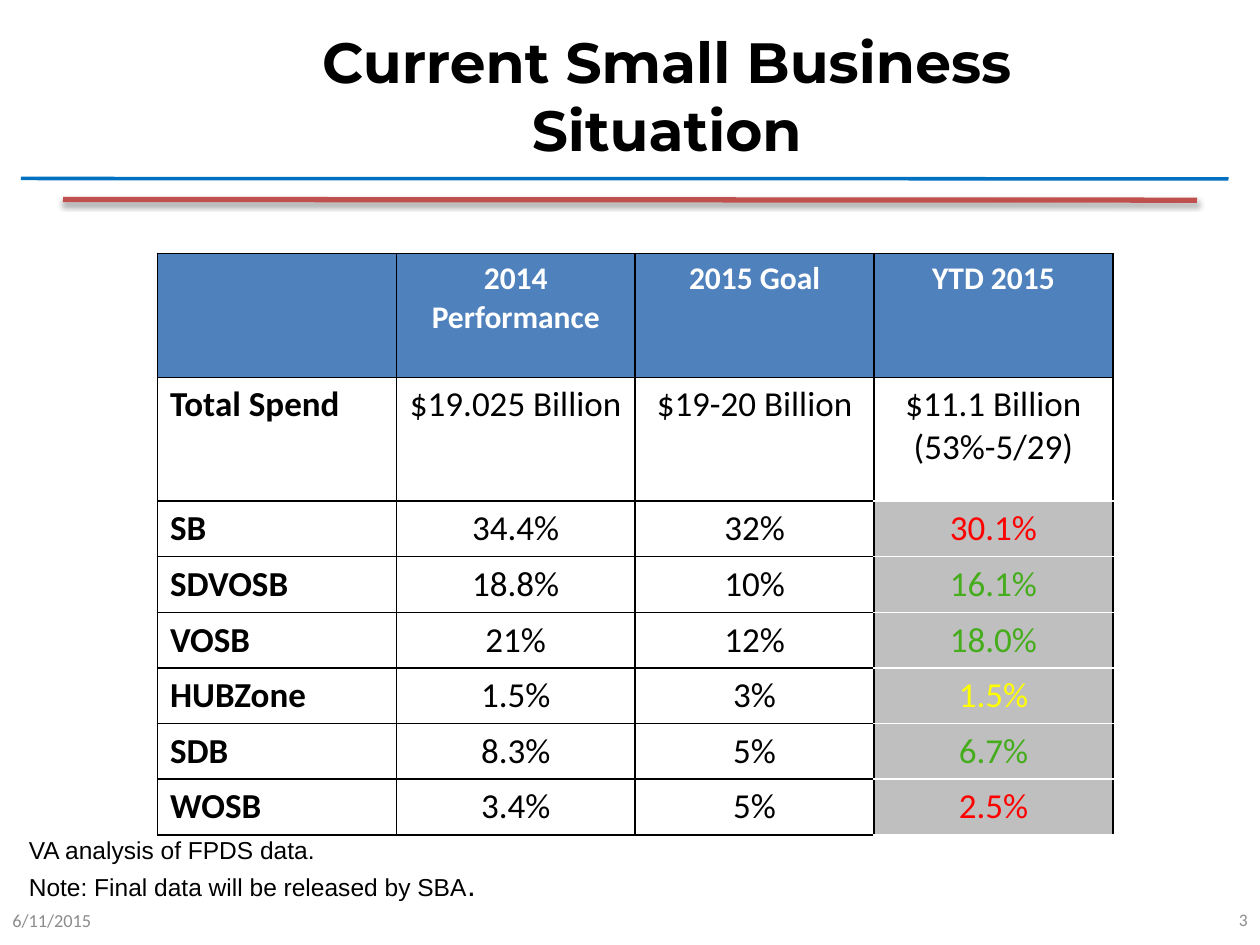
from dataclasses import dataclass
from typing import Optional

from lxml import etree
from pptx import Presentation
from pptx.dml.color import RGBColor
from pptx.enum.shapes import MSO_CONNECTOR
from pptx.enum.text import MSO_ANCHOR, PP_ALIGN
from pptx.oxml.ns import qn
from pptx.slide import Slide
from pptx.table import _Cell
from pptx.util import Pt

LEFT, CENTER, RIGHT = PP_ALIGN.LEFT, PP_ALIGN.CENTER, PP_ALIGN.RIGHT
TOP, MIDDLE = MSO_ANCHOR.TOP, MSO_ANCHOR.MIDDLE
STRAIGHT = MSO_CONNECTOR.STRAIGHT

BLACK, WHITE, GRAY, MUTED = "000000", "FFFFFF", "BFBFBF", "8C8C8C"
HEADER_BLUE, RULE_BLUE, RULE_RED = "4F81BD", "0070C0", "C0504D"
MISSED, MET, CLOSE = "FF0000", "45AC1C", "FFFF00"

COLUMN_WIDTH = 136.5
TALL_ROW, SHORT_ROW = 70.8, 31.8


@dataclass
class TextStyle:
    size: float
    font: str = "Calibri"
    color: str = BLACK
    bold: bool = False
    align: PP_ALIGN = LEFT


@dataclass
class Label:
    text: str
    left: float
    top: float
    width: float
    height: float
    style: TextStyle
    anchor: MSO_ANCHOR = MIDDLE


@dataclass
class Rule:
    left: float
    right: float
    start_y: float
    end_y: float
    color: str
    width: float
    shadow: bool = False


@dataclass
class GoalRow:
    name: str
    performance: str
    goal: str
    year_to_date: str
    status: Optional[str] = None


LABELS = [
    Label("6/11/2015", 0, 511.2, 168, 28.8, TextStyle(10.5, color=MUTED)),
    Label("3", 552, 511.2, 168, 28.8, TextStyle(10, color=MUTED, align=RIGHT)),
    Label("Current Small Business\vSituation", 96, 12, 570, 84,
          TextStyle(32.4, "Montserrat", bold=True, align=CENTER)),
]
NOTES = Label("VA analysis of FPDS data.\nNote: Final data will be released by SBA",
              9.4, 473.8, 504, 46, TextStyle(14, "Arial"), TOP)
RULES = [
    Rule(12, 702, 102, 102.2, RULE_BLUE, 2),
    Rule(36, 684, 114, 114.4, RULE_RED, 3, shadow=True),
]
HEADINGS = ["", "2014\nPerformance", "2015 Goal", "YTD 2015"]
GOAL_ROWS = [
    GoalRow("Total Spend", "$19.025 Billion", "$19-20 Billion", "$11.1 Billion\n(53%-5/29)"),
    GoalRow("SB", "34.4%", "32%", "30.1%", MISSED),
    GoalRow("SDVOSB", "18.8%", "10%", "16.1%", MET),
    GoalRow("VOSB", "21%", "12%", "18.0%", MET),
    GoalRow("HUBZone", "1.5%", "3%", "1.5%", CLOSE),
    GoalRow("SDB", "8.3%", "5%", "6.7%", MET),
    GoalRow("WOSB", "3.4%", "5%", "2.5%", MISSED),
]


def rgb(color: str) -> RGBColor:
    return RGBColor.from_string(color)


def style_text(text_frame, style: TextStyle) -> None:
    for paragraph in text_frame.paragraphs:
        paragraph.alignment = style.align
        for run in paragraph.runs:
            run.font.name = style.font
            run.font.size = Pt(style.size)
            run.font.bold = style.bold
            run.font.color.rgb = rgb(style.color)


def add_label(slide: Slide, label: Label):
    shape = slide.shapes.add_textbox(
        Pt(label.left), Pt(label.top), Pt(label.width), Pt(label.height))
    text_frame = shape.text_frame
    text_frame.word_wrap = True
    text_frame.vertical_anchor = label.anchor
    text_frame.text = label.text
    style_text(text_frame, label.style)
    return text_frame


def add_color(parent, color: str):
    return etree.SubElement(parent, qn("a:srgbClr"), val=color)


def add_rule(slide: Slide, rule: Rule) -> None:
    connector = slide.shapes.add_connector(
        STRAIGHT, Pt(rule.left), Pt(rule.start_y), Pt(rule.right), Pt(rule.end_y))
    connector.line.color.rgb = rgb(rule.color)
    connector.line.width = Pt(rule.width)
    effects = etree.SubElement(connector._element.spPr, qn("a:effectLst"))
    if rule.shadow:
        shadow = etree.SubElement(
            effects, qn("a:outerShdw"), blurRad=str(Pt(3.1)), dist=str(Pt(1.8)),
            dir="5400000", rotWithShape="0")
        etree.SubElement(add_color(shadow, BLACK), qn("a:alpha"), val="35000")


def fill_cell(cell: _Cell, text: str, style: TextStyle, fill: str,
              top: str = BLACK, bottom: str = BLACK) -> None:
    cell.text_frame.text = text
    style_text(cell.text_frame, style)
    properties = cell._tc.get_or_add_tcPr()
    for side, color in (("L", BLACK), ("R", BLACK), ("T", top), ("B", bottom)):
        border = etree.SubElement(properties, qn(f"a:ln{side}"), w=str(Pt(1)))
        add_color(etree.SubElement(border, qn("a:solidFill")), color)
    cell.fill.solid()
    cell.fill.fore_color.rgb = rgb(fill)


def add_goal_table(slide: Slide) -> None:
    heights = [TALL_ROW if row.status is None else SHORT_ROW for row in GOAL_ROWS]
    heights.insert(0, TALL_ROW)
    table = slide.shapes.add_table(
        len(heights), len(HEADINGS), Pt(90), Pt(144.8),
        Pt(COLUMN_WIDTH * len(HEADINGS)), Pt(sum(heights))).table
    table.first_row = table.horz_banding = False
    for column in table.columns:
        column.width = Pt(COLUMN_WIDTH)
    for table_row, height in zip(table.rows, heights):
        table_row.height = Pt(height)

    heading_style = TextStyle(18, color=WHITE, bold=True, align=CENTER)
    for index, heading in enumerate(HEADINGS):
        fill_cell(table.cell(0, index), heading, heading_style, HEADER_BLUE)

    name_style = TextStyle(20, bold=True)
    value_style = TextStyle(20, align=CENTER)
    for index, row in enumerate(GOAL_ROWS, start=1):
        fill_cell(table.cell(index, 0), row.name, name_style, WHITE)
        fill_cell(table.cell(index, 1), row.performance, value_style, WHITE)
        fill_cell(table.cell(index, 2), row.goal, value_style, WHITE)
        fill_cell(table.cell(index, 3), row.year_to_date,
                  TextStyle(20, color=row.status or BLACK, align=CENTER),
                  GRAY if row.status else WHITE,
                  top=WHITE if row.status else BLACK, bottom=WHITE)


def add_notes(slide: Slide) -> None:
    text_frame = add_label(slide, NOTES)
    period = text_frame.paragraphs[-1].add_run()
    period.text = "."
    period.font.name = NOTES.style.font
    period.font.size = Pt(18)
    period.font.color.rgb = rgb(BLACK)


def main() -> None:
    presentation = Presentation()
    presentation.slide_width, presentation.slide_height = Pt(720), Pt(540)
    slide = presentation.slides.add_slide(presentation.slide_layouts[6])
    for label in LABELS:
        add_label(slide, label)
    for rule in RULES:
        add_rule(slide, rule)
    add_goal_table(slide)
    add_notes(slide)
    presentation.save("out.pptx")


if __name__ == "__main__":
    main()
